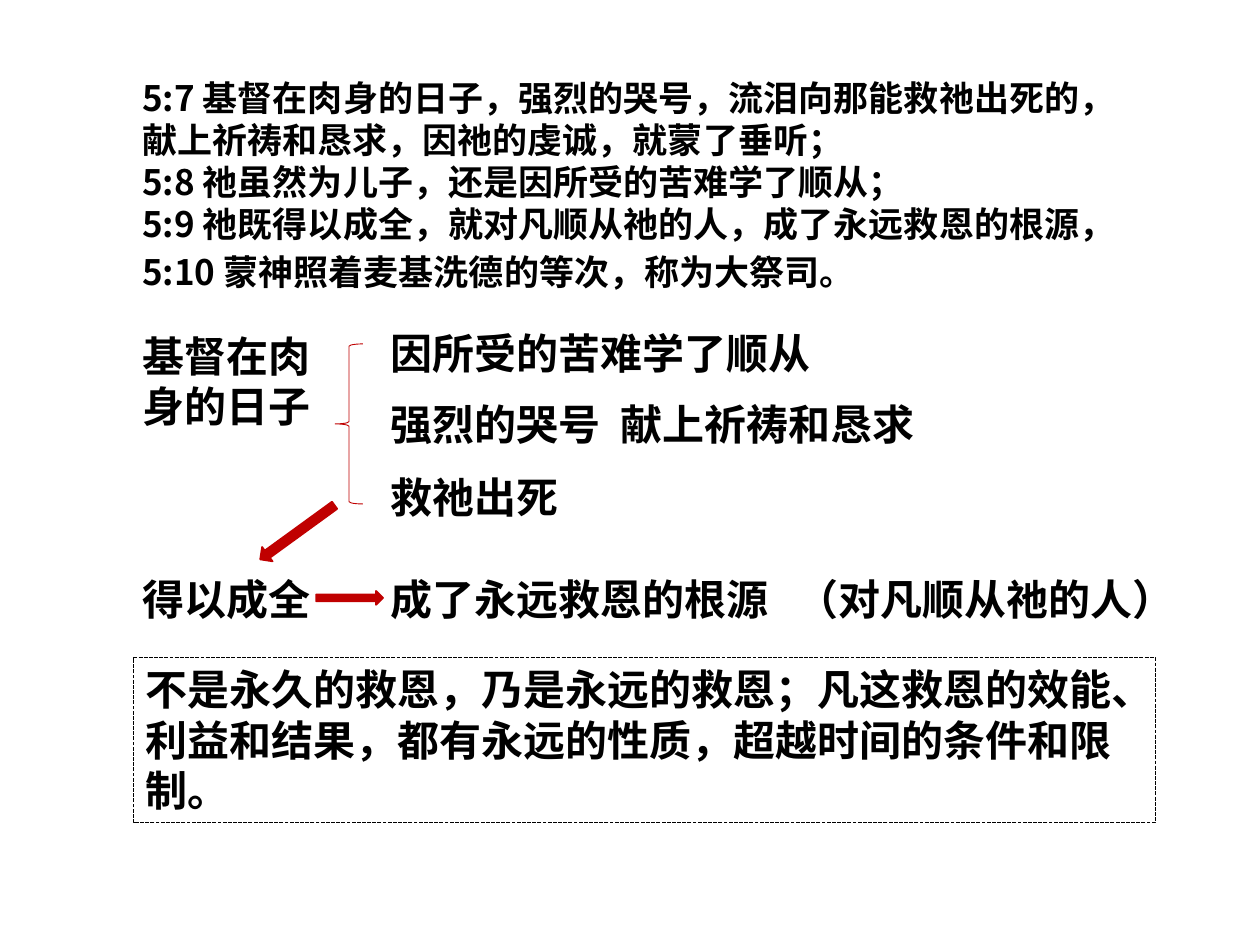
from dataclasses import dataclass

from pptx import Presentation
from pptx.dml.color import RGBColor
from pptx.enum.dml import MSO_LINE
from pptx.enum.lang import MSO_LANGUAGE_ID
from pptx.enum.shapes import MSO_SHAPE
from pptx.enum.text import MSO_ANCHOR, PP_ALIGN
from pptx.oxml.ns import qn
from pptx.util import Inches, Pt


@dataclass(frozen=True)
class Theme:
    ink: RGBColor = RGBColor(0x00, 0x00, 0x00)
    accent: RGBColor = RGBColor(0xC0, 0x00, 0x00)
    verse: int = 20
    point: int = 24
    latin: str = "Arial"
    chinese: str = "Noto Sans CJK SC"


THEME = Theme()
WIDTH, HEIGHT = 10, 7.5
LEFT, RIGHT = 1.03, 3
ROWS = (2.55, 3.11, 3.69, 4.5)
LINE = 0.5

VERSES = (
    "5:7 基督在肉身的日子，强烈的哭号，流泪向那能救祂出死的，献上祈祷和恳求，因祂的虔诚，就蒙了垂听；",
    "5:8 祂虽然为儿子，还是因所受的苦难学了顺从；",
    "5:9 祂既得以成全，就对凡顺从祂的人，成了永远救恩的根源，",
)
LAST_VERSE = "5:10 蒙神照着麦基洗德的等次，称为大祭司。"
SUMMARY = "不是永久的救恩，乃是永远的救恩；凡这救恩的效能、利益和结果，都有永远的性质，超越时间的条件和限制。"
PHRASES = (
    (RIGHT, 0, 3.55, "因所受的苦难学了顺从"),
    (RIGHT, 1, 1.87, "强烈的哭号"),
    (4.83, 1, 2.54, "献上祈祷和恳求"),
    (RIGHT, 2, 1.54, "救祂出死"),
    (LEFT, 3, 1.54, "得以成全"),
    (RIGHT, 3, 3.21, "成了永远救恩的根源"),
    (6.22, 3, 3.21, "（对凡顺从祂的人）"),
)


def write(shape, *lines, size=THEME.point, font=THEME.chinese, wrap=True):
    frame = shape.text_frame
    frame.word_wrap = wrap
    frame.vertical_anchor = MSO_ANCHOR.TOP
    for index, line in enumerate(lines):
        para = frame.add_paragraph() if index else frame.paragraphs[0]
        para.alignment = PP_ALIGN.LEFT
        span = para.add_run()
        span.text = line
        span.font.name = font
        span.font.size = Pt(size)
        span.font.bold = True
        span.font.color.rgb = THEME.ink
        span.font.language_id = MSO_LANGUAGE_ID.SIMPLIFIED_CHINESE
        latin = span.font._element.find(qn("a:latin"))
        east = latin.makeelement(qn("a:ea"), {"typeface": THEME.chinese})
        latin.addnext(east)


def add_text(page, place, *lines, **style):
    box = page.shapes.add_textbox(*map(Inches, place))
    write(box, *lines, **style)


def add_figure(page, kind, place, color, weight, filled=False, turn=0):
    shape = page.shapes.add_shape(kind, *map(Inches, place))
    shape.shadow.inherit = False
    shape.rotation = turn
    shape.line.color.rgb = color
    shape.line.width = Pt(weight)
    if filled:
        shape.fill.solid()
        shape.fill.fore_color.rgb = color
    else:
        shape.fill.background()
    return shape


def add_summary(page):
    frame = add_figure(page, MSO_SHAPE.RECTANGLE, (1.06, 5.22, 8.11, 1.31), THEME.ink, 0.75)
    frame.line.dash_style = MSO_LINE.SQUARE_DOT
    write(frame, SUMMARY)


def main():
    deck = Presentation()
    deck.slide_width, deck.slide_height = Inches(WIDTH), Inches(HEIGHT)
    page = deck.slides.add_slide(deck.slide_layouts[6])

    add_text(page, (LEFT, 0.56, 8.04, 1.45), *VERSES, size=THEME.verse)
    add_text(page, (LEFT, 1.94, 8.15, 0.44), LAST_VERSE, size=THEME.verse)
    add_text(page, (LEFT, 2.57, 1.66, 0.91), "基督在肉身的日子", font=THEME.latin)
    for left, row, width, phrase in PHRASES:
        add_text(page, (left, ROWS[row], width, LINE), phrase, font=THEME.latin, wrap=False)

    add_summary(page)
    add_figure(page, MSO_SHAPE.LEFT_BRACE, (2.66, 2.73, 0.22, 1.27), THEME.accent, 0.5)
    add_figure(page, MSO_SHAPE.DOWN_ARROW, (2.29, 3.86, 0.14, 0.73), THEME.accent, 1, filled=True, turn=54)
    add_figure(page, MSO_SHAPE.RIGHT_ARROW, (2.51, 4.69, 0.53, 0.11), THEME.accent, 1, filled=True)
    deck.save("out.pptx")


if __name__ == "__main__":
    main()
